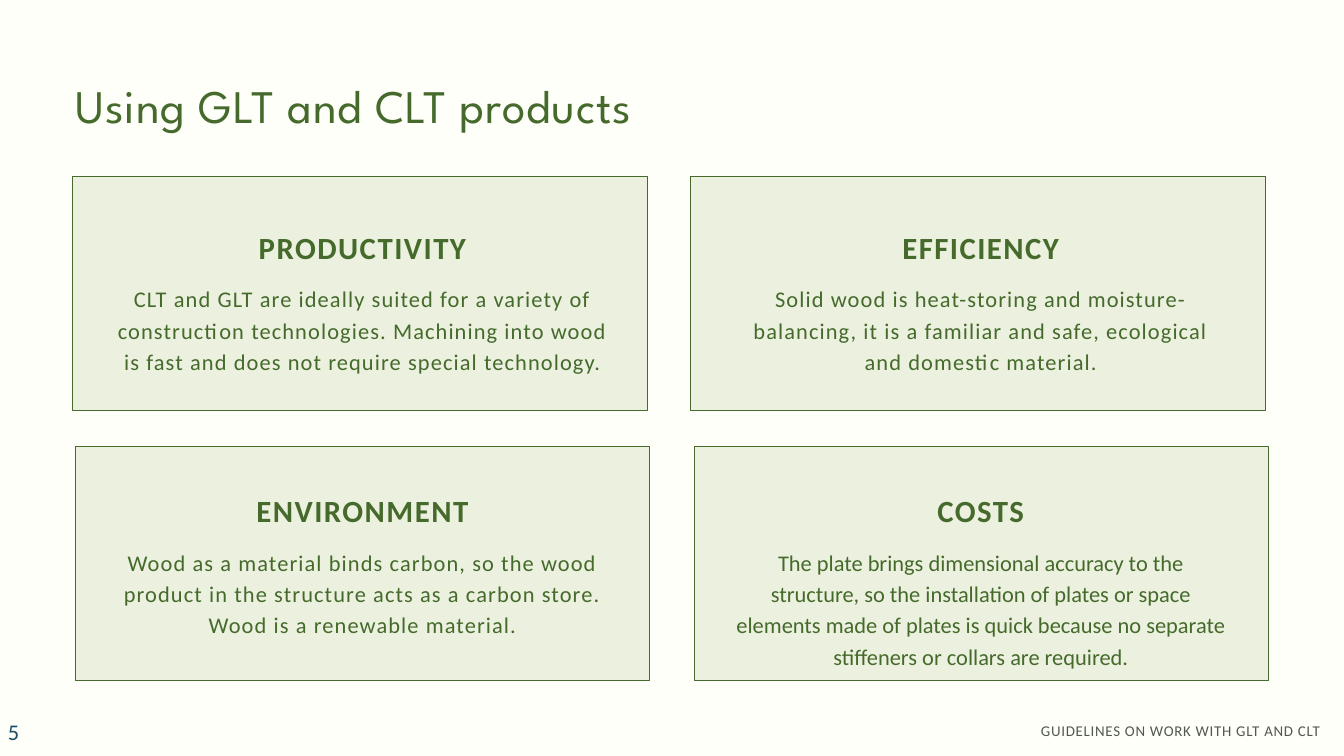
"""Build the slide on the benefits of using GLT and CLT products."""
import pptx
import pptx.dml.color
import pptx.enum.text
import pptx.enum.shapes
import pptx.util
from pptx.util import Inches

COLORS = {"background": "FEFFF8", "green": "456A2C", "card": "EBF1DE",
          "footer": "52584D", "number": "1E4D65"}
ALIGN = pptx.enum.text.PP_ALIGN
ANCHOR = pptx.enum.text.MSO_ANCHOR


def rgb(name):
    return pptx.dml.color.RGBColor.from_string(COLORS[name])


def write(box, text, size, color, align, leading=None, spacing=0.0,
          font="Calibri", bold=False, margins=(0, 0), anchor=ANCHOR.TOP):
    frame = box.text_frame
    frame.word_wrap = True
    frame.auto_size = pptx.enum.text.MSO_AUTO_SIZE.NONE
    frame.vertical_anchor = anchor
    frame.margin_left = frame.margin_right = Inches(margins[0])
    frame.margin_top = frame.margin_bottom = Inches(margins[1])
    paragraph = frame.paragraphs[0]
    paragraph.text = text
    paragraph.alignment = align
    if leading:
        paragraph.line_spacing = pptx.util.Pt(leading)
    paragraph.font.name = font
    paragraph.font.size = pptx.util.Pt(size)
    paragraph.font.bold = bold
    paragraph.font.color.rgb = rgb(color)
    properties = paragraph._p.get_or_add_pPr().get_or_add_defRPr()
    properties.set("spc", str(round(spacing * 100)))


deck = pptx.Presentation()
deck.slide_width, deck.slide_height = Inches(20), Inches(11.25)
slide = deck.slides.add_slide(deck.slide_layouts[5])
slide.background.fill.solid()
slide.background.fill.fore_color.rgb = rgb("background")

footer = slide.shapes.add_textbox(Inches(11.33), Inches(10.7), Inches(8.32), Inches(0.29))
write(footer, "GUIDELINES ON WORK WITH GLT AND CLT", 16, "footer", ALIGN.RIGHT, 22.4, 0.8)

title = slide.shapes.title
title.left, title.top = Inches(1.12), Inches(1.05)
title.width, title.height = Inches(17.71), Inches(0.94)
write(title, "Using GLT and CLT products", 50, "green", ALIGN.LEFT, 66.8, 1,
      font="League Spartan")

text_lefts = [1.7, 10.9]
rows = [{"top": 2.62, "heading": 3.38, "lefts": [1.08, 10.28]},
        {"top": 6.64, "heading": 7.3, "lefts": [1.12, 10.33]}]
benefits = [
    (1, 0, "ENVIRONMENT", 1.4, 1.2,
     "Wood as a material binds carbon, so the wood product in the structure acts "
     "as a carbon store. Wood is a renewable material."),
    (0, 0, "PRODUCTIVITY", 1.87, 1.2,
     "CLT and GLT are ideally suited for a variety of construction technologies. "
     "Machining into wood is fast and does not require special technology."),
    (0, 1, "EFFICIENCY", 1.4, 1.2,
     "Solid wood is heat-storing and moisture-balancing, it is a familiar and safe, "
     "ecological and domestic material."),
    (1, 1, "COSTS", 1.87, 0,
     "The plate brings dimensional accuracy to the structure, so the installation of "
     "plates or space elements made of plates is quick because no separate stiffeners "
     "or collars are required."),
]
for row, column, name, height, spacing, description in benefits:
    place = rows[row]
    card = slide.shapes.add_shape(
        pptx.enum.shapes.MSO_SHAPE.RECTANGLE,
        Inches(place["lefts"][column]), Inches(place["top"]), Inches(8.55), Inches(3.48))
    card.shadow.inherit = False
    card.fill.solid()
    card.fill.fore_color.rgb = rgb("card")
    card.line.color.rgb = rgb("green")
    card.line.width = pptx.util.Pt(0.75)

    benefit = slide.shapes.add_group_shape()
    left = Inches(text_lefts[column])
    heading = benefit.shapes.add_textbox(
        left, Inches(place["heading"]), Inches(7.39), Inches(0.56))
    write(heading, name, 33, "green", ALIGN.CENTER, 41.2, 1.6, bold=True)
    body = benefit.shapes.add_textbox(
        left, Inches(place["heading"] + 0.8), Inches(7.39), Inches(height))
    write(body, description, 24, "green", ALIGN.CENTER, 33.6, spacing)

page_number = slide.shapes.add_textbox(Inches(0.02), Inches(10.69), Inches(2.33), Inches(0.4))
write(page_number, "5", 24, "number", ALIGN.LEFT, spacing=1.2,
      margins=(0.1, 0.05), anchor=ANCHOR.MIDDLE)

deck.save("out.pptx")
